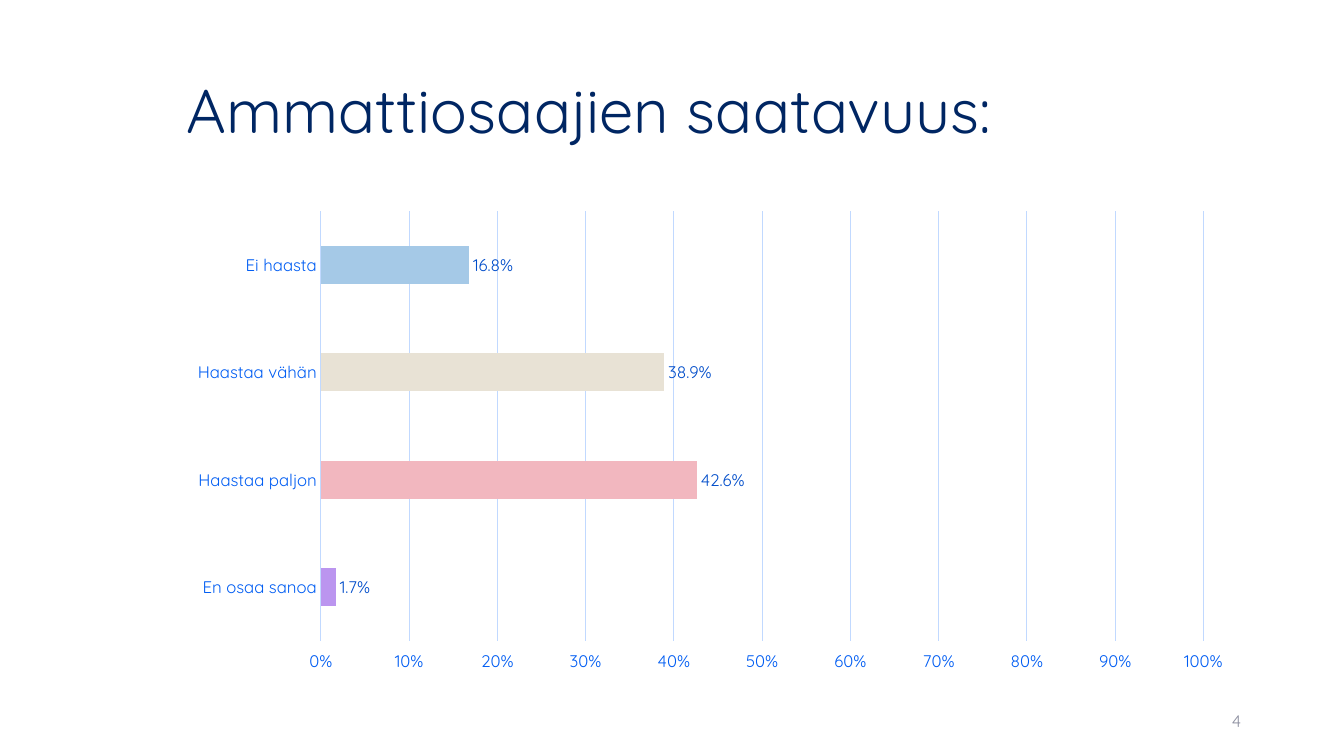
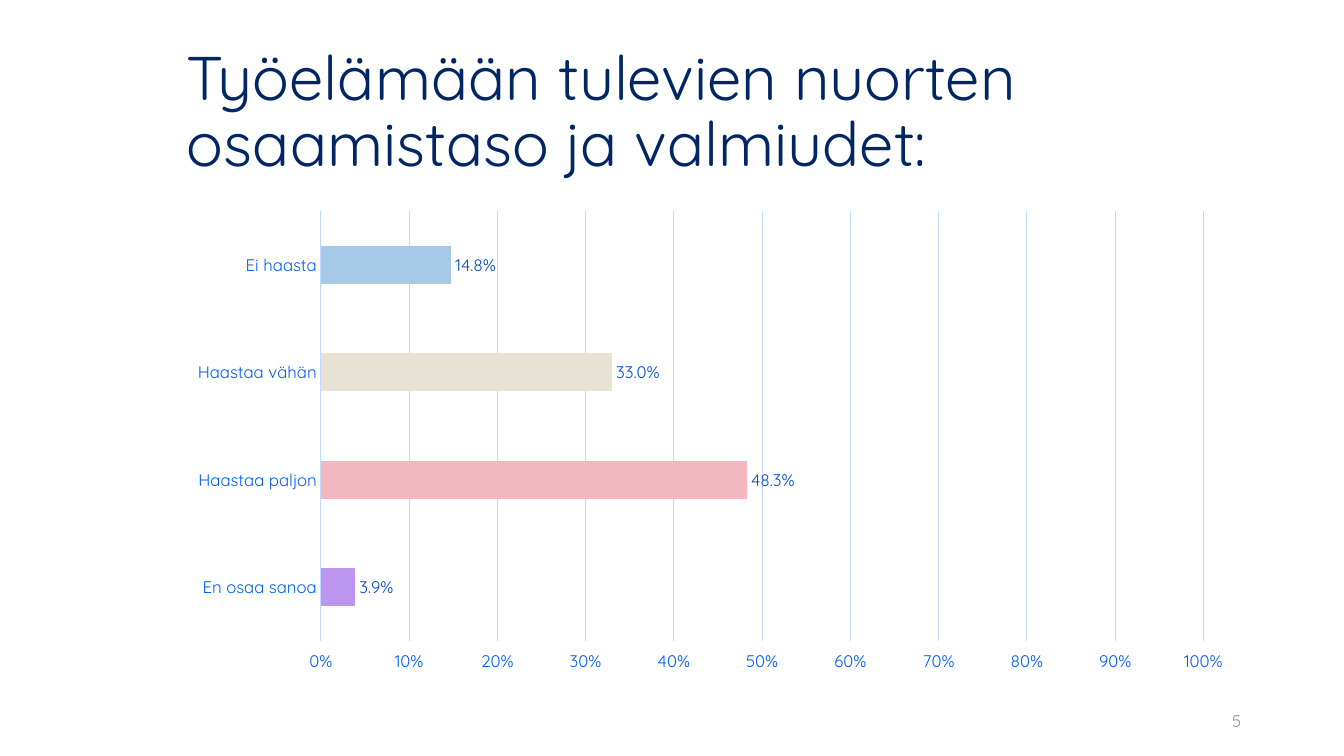
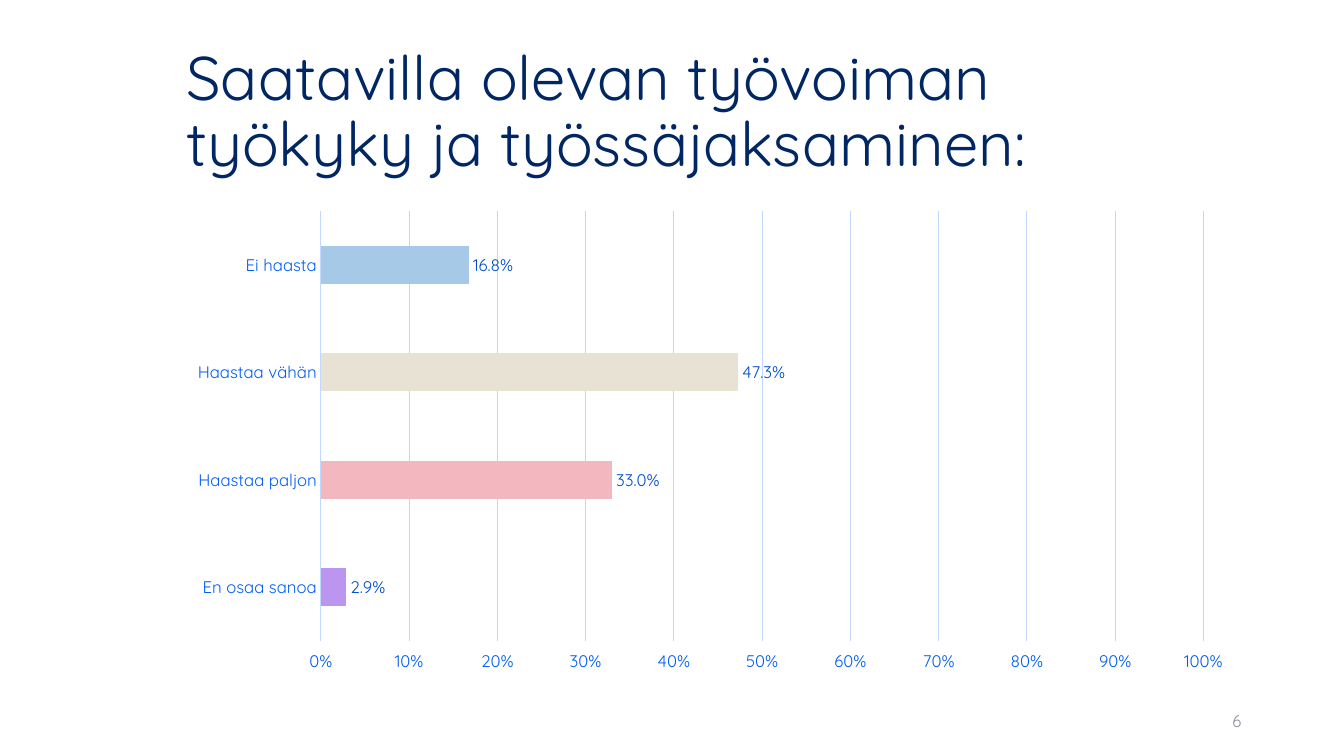
import pptx
import pptx.chart.data
import pptx.dml.color
import pptx.enum.chart
import pptx.enum.text
import pptx.util

Inches, Pt = pptx.util.Inches, pptx.util.Pt
RGB = pptx.dml.color.RGBColor.from_string
ALIGN, ANCHOR = pptx.enum.text.PP_ALIGN, pptx.enum.text.MSO_ANCHOR
XL = pptx.enum.chart

COLORS = {
    "title": "002663", "number": "8C8E9F", "axis": "005DF3",
    "label": "004DCA", "grid": "C1D9FF",
}
FONT = "Quicksand"
LEFT, WIDTH = 1.75, 10.59
FIRST_NUMBER = 4

ANSWERS = [
    ("Ei haasta", "A5C9E7"),
    ("Haastaa vähän", "E8E2D5"),
    ("Haastaa paljon", "F2B7BF"),
    ("En osaa sanoa", "BB95EF"),
]
SLIDES = [
    ("Ammattiosaajien saatavuus:", (0.168, 0.389, 0.426, 0.017)),
    ("Työelämään tulevien nuorten osaamistaso ja valmiudet:", (0.148, 0.33, 0.483, 0.039)),
    ("Saatavilla olevan työvoiman työkyky ja työssäjaksaminen:", (0.168, 0.473, 0.33, 0.029)),
]
TITLE = {
    "box": (LEFT, 0.4, WIDTH, 1.45), "size": 44, "color": "title",
    "paragraph": {"alignment": ALIGN.LEFT, "line_spacing": 0.9},
}
NUMBER = {
    "box": (9.41, 6.95, 3, 0.4), "size": 12, "color": "number",
    "paragraph": {"alignment": ALIGN.RIGHT},
}
CHART_BOX = (LEFT, 2, WIDTH, 4.76)
CATEGORY_AXIS = {"reverse_order": True, "has_major_gridlines": False}
VALUE_AXIS = {
    "minimum_scale": 0, "maximum_scale": 1, "major_unit": 0.1,
    "has_major_gridlines": True,
    "tick_label_position": XL.XL_TICK_LABEL_POSITION.HIGH,
}
LABELS = {
    "show_value": True, "number_format": "0.0%", "number_format_is_linked": False,
    "position": XL.XL_LABEL_POSITION.OUTSIDE_END,
}


def apply(target, values):
    for name, value in values.items():
        setattr(target, name, value)


def style_font(font, size, color):
    apply(font, {"name": FONT, "size": Pt(size), "bold": False})
    font.color.rgb = RGB(COLORS[color])


def style_line(line):
    line.color.rgb = RGB(COLORS["grid"])
    line.width = Pt(0.75)


def add_text(s, text, style):
    tf = s.shapes.add_textbox(*map(Inches, style["box"])).text_frame
    apply(tf, {"word_wrap": True, "vertical_anchor": ANCHOR.MIDDLE})
    p = tf.paragraphs[0]
    apply(p, style["paragraph"])
    r = p.add_run()
    r.text = text
    style_font(r.font, style["size"], style["color"])


def add_answer_chart(s, values):
    data = pptx.chart.data.CategoryChartData()
    data.categories = [name for name, color in ANSWERS]
    data.add_series("Series 1", values)
    chart = s.shapes.add_chart(
        XL.XL_CHART_TYPE.BAR_CLUSTERED, *map(Inches, CHART_BOX), data).chart
    apply(chart, {"has_legend": False, "has_title": False})
    style_font(chart.font, 10, "title")

    for axis, settings in ((chart.category_axis, CATEGORY_AXIS), (chart.value_axis, VALUE_AXIS)):
        apply(axis, settings)
        axis.major_tick_mark = axis.minor_tick_mark = XL.XL_TICK_MARK.NONE
        style_font(axis.tick_labels.font, 12, "axis")
    style_line(chart.category_axis.format.line)
    style_line(chart.value_axis.major_gridlines.format.line)
    chart.value_axis.format.line.fill.background()
    apply(chart.value_axis.tick_labels,
          {"number_format": "0%", "number_format_is_linked": False})

    plot = chart.plots[0]
    apply(plot, {"gap_width": 182, "vary_by_categories": False})
    series = plot.series[0]
    for i, (name, color) in enumerate(ANSWERS):
        fill = series.points[i].format.fill
        fill.solid()
        fill.fore_color.rgb = RGB(color)
    apply(series.data_labels, LABELS)
    style_font(series.data_labels.font, 12, "label")


def main():
    prs = pptx.Presentation()
    apply(prs, {"slide_width": Inches(13.33), "slide_height": Inches(7.5)})
    for number, (title, values) in enumerate(SLIDES, FIRST_NUMBER):
        s = prs.slides.add_slide(prs.slide_layouts[6])
        add_text(s, title, TITLE)
        add_text(s, str(number), NUMBER)
        add_answer_chart(s, values)
    prs.save("out.pptx")


if __name__ == "__main__":
    main()
